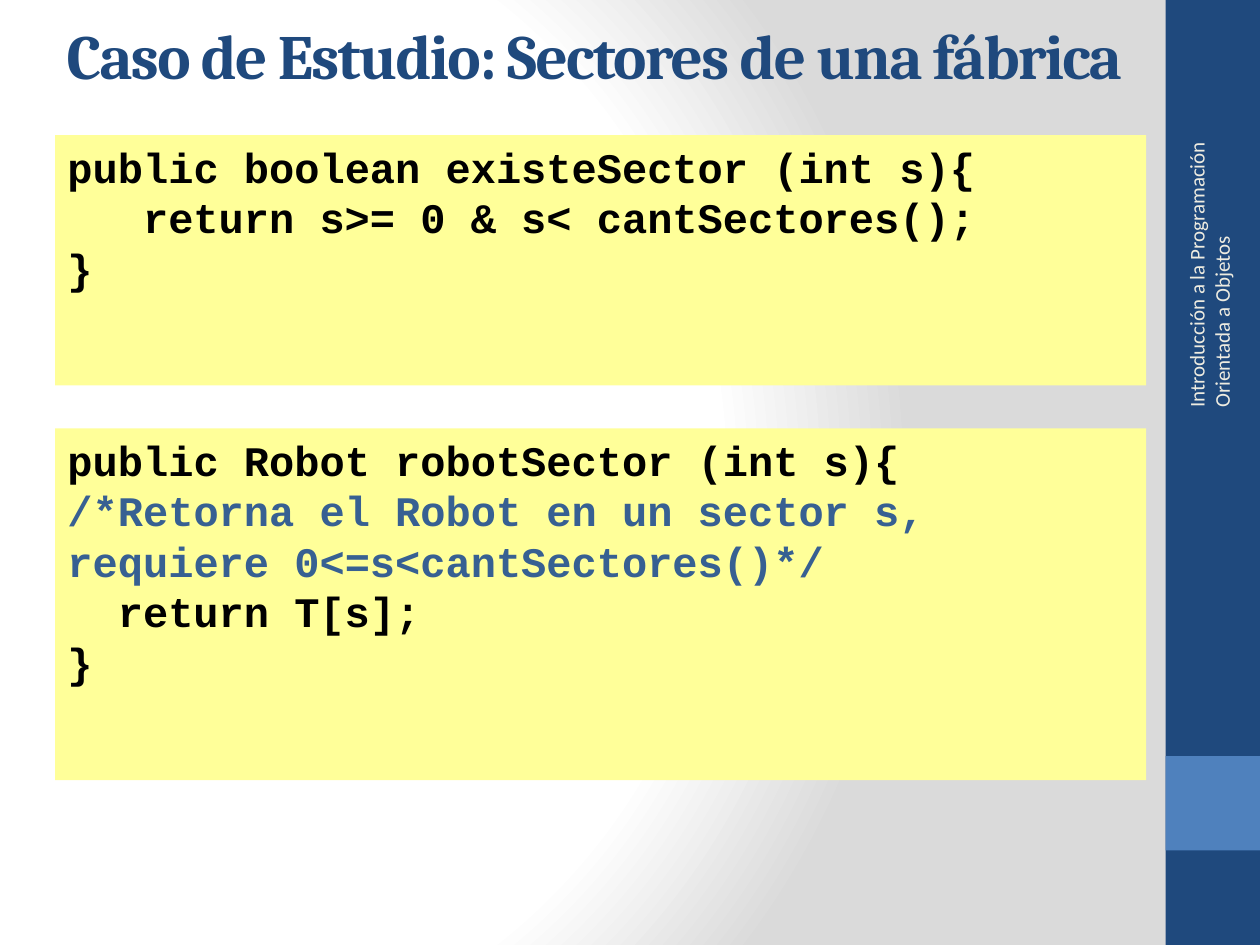
from dataclasses import dataclass

from pptx import Presentation
from pptx.dml.color import RGBColor
from pptx.enum.shapes import MSO_SHAPE
from pptx.enum.text import MSO_ANCHOR, PP_ALIGN
from pptx.oxml import parse_xml
from pptx.oxml.ns import nsdecls
from pptx.slide import Slide
from pptx.util import Pt

NAVY = "1F497D"
BLUE = "4F81BD"
YELLOW = "FFFF99"
BLACK = "000000"
COMMENT = "376092"
CREAM = "EEECE1"

CODE_SIZE = 24
CHARACTER_WIDTH = 0.6 * CODE_SIZE


@dataclass
class Box:
    left: float
    top: float
    width: float
    height: float


@dataclass
class CodeLine:
    text: str
    indent: int = 0
    color: str = BLACK


@dataclass
class CodePanel:
    box: Box
    lines: list[CodeLine]


SIDEBAR = Box(666, 0, 54, 540)
SIDEBAR_ACCENT = Box(666, 432, 54, 54)

CODE_PANELS = [
    CodePanel(Box(31.5, 77.25, 623.5, 143), [
        CodeLine("public boolean existeSector (int s){"),
        CodeLine("return s>= 0 & s< cantSectores();", indent=3),
        CodeLine("}"),
    ]),
    CodePanel(Box(31.5, 244.75, 623.5, 201), [
        CodeLine("public Robot robotSector (int s){"),
        CodeLine("/*Retorna el Robot en un sector s, requiere 0<=s<cantSectores()*/",
                 color=COMMENT),
        CodeLine("return T[s];", indent=2),
        CodeLine("}"),
    ]),
]


def rgb(color: str) -> RGBColor:
    return RGBColor.from_string(color)


def set_radial_background(slide: Slide) -> None:
    slide.background.fill.solid()
    properties = slide.element.xpath("./p:cSld/p:bg/p:bgPr")[0]
    stops = "".join(
        f'<a:gs pos="{position * 1000}"><a:srgbClr val="{color}"/></a:gs>'
        for position, color in [(0, "FFFFFF"), (75, "FFFFFF"), (100, "DADADA")]
    )
    gradient = parse_xml(
        f'<a:gradFill {nsdecls("a")} rotWithShape="1"><a:gsLst>{stops}</a:gsLst>'
        '<a:path path="circle">'
        '<a:fillToRect l="20000" t="50000" r="100000" b="50000"/>'
        '</a:path></a:gradFill>'
    )
    properties.replace(properties[0], gradient)


def add_rectangle(slide: Slide, box: Box, color: str):
    shape = slide.shapes.add_shape(
        MSO_SHAPE.RECTANGLE, Pt(box.left), Pt(box.top), Pt(box.width), Pt(box.height))
    shape.shadow.inherit = False
    shape.fill.solid()
    shape.fill.fore_color.rgb = rgb(color)
    shape.line.fill.background()
    return shape


def write(paragraph, text: str, *, font: str, size: float, color: str,
          bold: bool = False, spacing: float = 0, indent: float = 0) -> None:
    """Add a formatted run; spacing and indent are in points."""
    paragraph.alignment = PP_ALIGN.LEFT
    run = paragraph.add_run()
    run.text = text
    run.font.name = font
    run.font.size = Pt(size)
    run.font.bold = bold
    run.font.color.rgb = rgb(color)
    if spacing:
        run.font._element.set("spc", str(round(spacing * 100)))
    if indent:
        paragraph._p.get_or_add_pPr().set("marL", str(Pt(indent)))


def add_label(slide: Slide, box: Box, text: str, rotation: float = 0, **text_format) -> None:
    label = slide.shapes.add_textbox(
        Pt(box.left), Pt(box.top), Pt(box.width), Pt(box.height))
    label.rotation = rotation
    frame = label.text_frame
    frame.word_wrap = True
    frame.vertical_anchor = MSO_ANCHOR.MIDDLE
    write(frame.paragraphs[0], text, **text_format)


def add_code_panel(slide: Slide, panel: CodePanel) -> None:
    frame = add_rectangle(slide, panel.box, YELLOW).text_frame
    frame.word_wrap = True
    frame.vertical_anchor = MSO_ANCHOR.TOP
    for index, line in enumerate(panel.lines):
        paragraph = frame.add_paragraph() if index else frame.paragraphs[0]
        write(paragraph, line.text, font="Courier New", size=CODE_SIZE,
              color=line.color, bold=True, indent=line.indent * CHARACTER_WIDTH)


def main() -> None:
    presentation = Presentation()
    presentation.slide_width = Pt(720)
    presentation.slide_height = Pt(540)
    slide = presentation.slides.add_slide(presentation.slide_layouts[6])

    set_radial_background(slide)
    add_rectangle(slide, SIDEBAR, NAVY)
    add_rectangle(slide, SIDEBAR_ACCENT, BLUE)
    add_label(slide, Box(594.75, 129.5, 192, 29),
              "Introducción a la Programación Orientada a Objetos",
              rotation=270, font="Calibri", size=12, color=CREAM)
    for panel in CODE_PANELS:
        add_code_panel(slide, panel)
    add_label(slide, Box(31, 3.5, 658, 55), "Caso de Estudio: Sectores de una fábrica",
              font="Cambria", size=36, color=NAVY, bold=True, spacing=-1)

    presentation.save("out.pptx")


if __name__ == "__main__":
    main()
